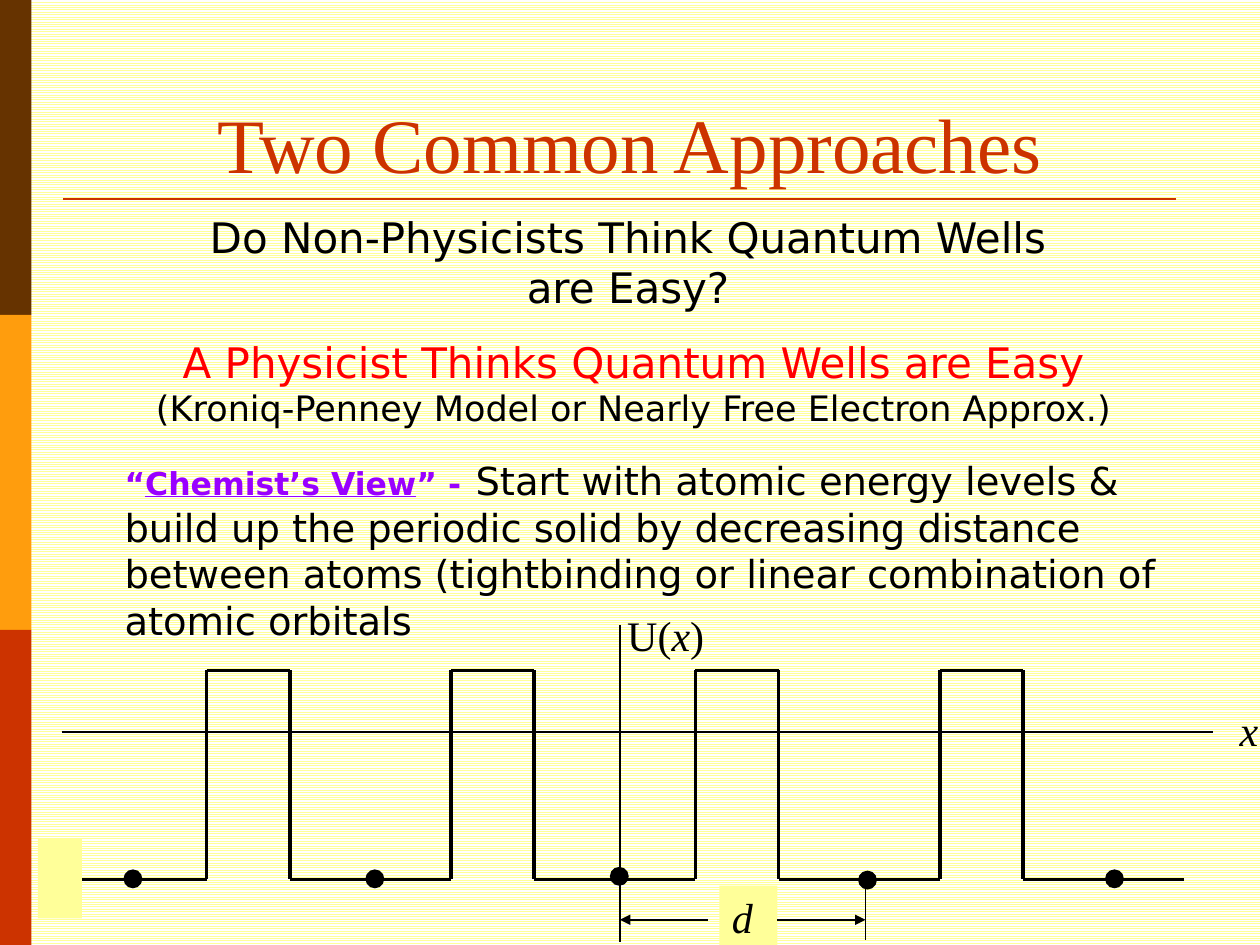
from dataclasses import dataclass

from lxml.etree import SubElement
from pptx import Presentation
from pptx.dml.color import RGBColor
from pptx.enum.dml import MSO_PATTERN
from pptx.enum.shapes import MSO_CONNECTOR, MSO_SHAPE
from pptx.enum.text import MSO_ANCHOR, PP_ALIGN
from pptx.oxml.ns import qn
from pptx.util import Inches, Pt

COLORS = {
    "black": "000000", "white": "FFFFFF", "yellow": "FFFF99", "brown": "663300",
    "orange": "FF9D0D", "rust": "CC3300", "red": "FF0000", "violet": "9900FF",
}
SANS, SERIF = "DejaVu Sans", "Times New Roman"


@dataclass
class Run:
    text: str
    size: float
    color: str = "black"
    bold: bool = False
    italic: bool = False
    underline: bool = False


def rgb(name: str) -> RGBColor:
    return RGBColor.from_string(COLORS[name])


def add_block(shapes, kind, x: float, y: float, w: float, h: float, color: str):
    sp = shapes.add_shape(kind, Inches(x), Inches(y), Inches(w), Inches(h))
    sp.shadow.inherit = False
    sp.fill.solid()
    sp.fill.fore_color.rgb = rgb(color)
    sp.line.fill.background()
    return sp


def add_line(shapes, x1: float, y1: float, x2: float, y2: float,
             width: float = 0.75, color: str = "black", arrow: bool = False) -> None:
    c = shapes.add_connector(MSO_CONNECTOR.STRAIGHT, Inches(x1), Inches(y1),
                             Inches(x2), Inches(y2))
    c.line.width = Pt(width)
    c.line.color.rgb = rgb(color)
    if arrow:
        SubElement(c.line._get_or_add_ln(), qn("a:tailEnd"), type="triangle")
    SubElement(c._element.spPr, qn("a:effectLst"))


def write(sp, runs: list[Run], font: str, align=PP_ALIGN.LEFT,
          anchor=MSO_ANCHOR.TOP, indent: float = 0) -> None:
    tf = sp.text_frame
    tf.word_wrap = True
    tf.vertical_anchor = anchor
    p = tf.paragraphs[0]
    p.alignment = align
    p.font.name = font
    if indent:
        p._p.get_or_add_pPr().set("marL", str(Inches(indent)))
    for run in runs:
        r = p.add_run()
        r.text = run.text
        r.font.name = font
        r.font.size = Pt(run.size)
        r.font.color.rgb = rgb(run.color)
        r.font.bold, r.font.italic = run.bold, run.italic
        r.font.underline = run.underline


def add_text(shapes, x: float, y: float, w: float, h: float,
             runs: list[Run], font: str, **layout) -> None:
    sp = shapes.add_textbox(Inches(x), Inches(y), Inches(w), Inches(h))
    write(sp, runs, font, **layout)


def draw_frame(s) -> None:
    # Striped background, side bars and title rule
    fill = s.background.fill
    fill.patterned()
    fill.pattern = MSO_PATTERN.NARROW_HORIZONTAL
    fill.fore_color.rgb = rgb("yellow")
    fill.back_color.rgb = rgb("white")
    for i, color in enumerate(("brown", "orange", "rust")):
        add_block(s.shapes, MSO_SHAPE.RECTANGLE, 0, 2.5 * i, 0.25, 2.5, color)
    add_line(s.shapes, 0.5, 1.58, 9.33, 1.58, 1.5, "rust")


def draw_wells(shapes) -> None:
    # Periodic potential: floor, rise, top and fall in each period
    floor, top, period, barrier = 6.98, 5.32, 1.94, 0.66
    first_rise, well = 1.64, period - barrier
    for i in range(5):
        rise = first_rise + period * i
        add_line(shapes, rise - well, floor, rise, floor, 2)
        if i < 4:
            fall = rise + barrier
            add_line(shapes, rise, floor, rise, top, 2)
            add_line(shapes, rise, top, fall, top, 2)
            add_line(shapes, fall, top, fall, floor, 2)
    # Atoms
    for x, y in ((0.98, 6.9), (2.9, 6.9), (4.84, 6.88), (6.81, 6.91), (8.77, 6.9)):
        add_block(shapes, MSO_SHAPE.OVAL, x, y, 0.15, 0.15, "black")


def draw_axes(shapes) -> None:
    axis, atom, dim_y = 4.92, 6.87, 7.3
    add_text(shapes, 4.88, 4.79, 0.96, 0.5,
             [Run("U(", 24), Run("x", 24, italic=True), Run(")", 24)], SERIF)
    add_line(shapes, axis, 4.96, axis, 7.48)
    add_text(shapes, 9.74, 5.54, 0.46, 0.5, [Run("x", 24, italic=True)], SERIF)
    add_line(shapes, 0.49, 5.81, 9.63, 5.81)
    # Spacing d between neighbouring atoms
    sp = add_block(shapes, MSO_SHAPE.RECTANGLE, 5.71, 7.03, 0.46, 0.5, "yellow")
    write(sp, [Run("d", 24, italic=True)], SERIF)
    add_line(shapes, atom, 6.99, atom, 7.46)
    add_line(shapes, 6.17, dim_y, atom, dim_y, 1, arrow=True)
    add_line(shapes, 5.62, dim_y, axis, dim_y, 1, arrow=True)
    # Cover over the left end of the potential
    add_block(shapes, MSO_SHAPE.RECTANGLE, 0.3, 6.66, 0.35, 0.63, "yellow")


def draw_text(shapes) -> None:
    add_text(shapes, 0.39, 3.52, 9.39, 1.65, [
        Run("“", 18, "violet", bold=True),
        Run("Chemist’s View", 18, "violet", bold=True, underline=True),
        Run("” -", 18, "violet", bold=True),
        Run(" ", 26),
        Run("Start with atomic energy levels & build up the periodic solid by "
            "decreasing distance between atoms (tightbinding or linear "
            "combination of atomic orbitals", 22),
    ], SANS, indent=0.5)
    add_text(shapes, 0.5, 0.3, 9, 1.25, [Run("Two Common Approaches", 44, "rust")],
             SERIF, align=PP_ALIGN.CENTER, anchor=MSO_ANCHOR.BOTTOM)
    add_text(shapes, 1.25, 1.63, 7.47, 0.91,
             [Run("Do Non-Physicists Think Quantum Wells are Easy?", 24)],
             SANS, align=PP_ALIGN.CENTER)
    add_text(shapes, 0.81, 2.62, 8.44, 0.84, [
        Run("A Physicist Thinks Quantum Wells are Easy ", 24, "red"),
        Run("(Kroniq-Penney Model or Nearly Free Electron Approx.)", 20),
    ], SANS, align=PP_ALIGN.CENTER)


def main() -> None:
    prs = Presentation()
    prs.slide_width, prs.slide_height = Inches(10), Inches(7.5)
    s = prs.slides.add_slide(prs.slide_layouts[6])
    draw_frame(s)
    draw_text(s.shapes)
    draw_wells(s.shapes.add_group_shape().shapes)
    draw_axes(s.shapes)
    prs.save("out.pptx")


if __name__ == "__main__":
    main()
